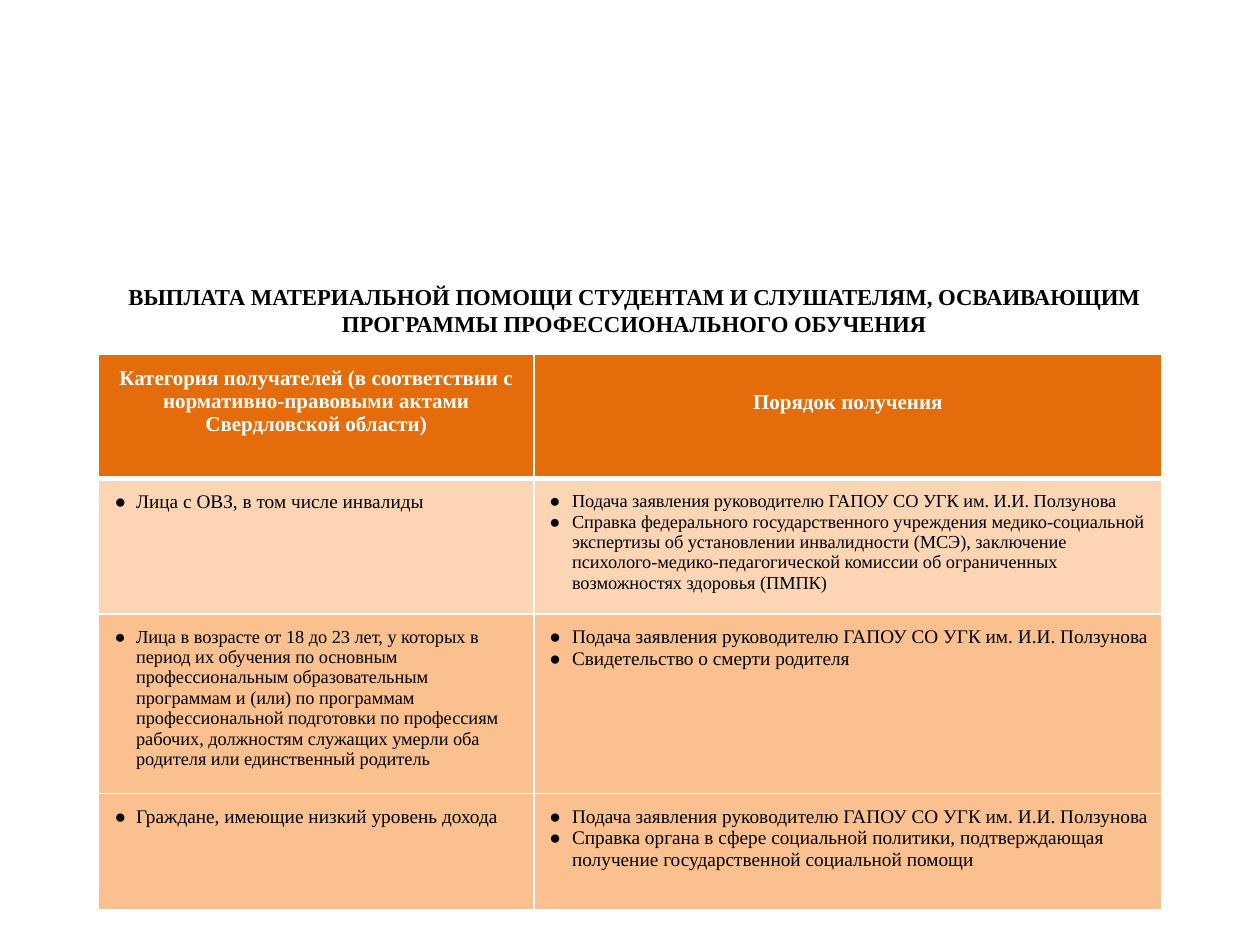
from lxml import etree
from pptx import Presentation
from pptx.dml.color import RGBColor
from pptx.enum import text
from pptx.oxml.ns import qn
from pptx.util import Inches, Pt

FONT = "Times New Roman"
WHITE, BLACK = "FFFFFF", "000000"
HEADER_FILL, LIGHT_FILL, DARK_FILL = "E46C0A", "FCD5B5", "FAC090"
COLUMN_WIDTHS = [3.46, 4.98]
BULLET_HANGS = [0.17, 0.18]
MARGIN = 0.1

TITLE = ("ВЫПЛАТА МАТЕРИАЛЬНОЙ ПОМОЩИ СТУДЕНТАМ И СЛУШАТЕЛЯМ, "
         "ОСВАИВАЮЩИМ ПРОГРАММЫ ПРОФЕССИОНАЛЬНОГО ОБУЧЕНИЯ")
HEADERS = [
    ("Категория получателей (в соответствии с нормативно-правовыми актами "
     "Свердловской области)", MARGIN),
    ("Порядок получения", 0.29),
]
HEADER_HEIGHT = 0.99
APPLICATION = "Подача заявления руководителю ГАПОУ СО УГК им. И.И. Ползунова"
RECIPIENTS = [
    (1.06, LIGHT_FILL, [
        (11, ["Лица с ОВЗ, в том числе инвалиды"]),
        (10.5, [APPLICATION,
                "Справка федерального государственного учреждения медико-социальной "
                "экспертизы об установлении инвалидности (МСЭ), заключение "
                "психолого-медико-педагогической комиссии об ограниченных "
                "возможностях здоровья (ПМПК)"]),
    ]),
    (1.41, DARK_FILL, [
        (10.5, ["Лица в возрасте от 18 до 23 лет, у которых в период их обучения по "
                "основным профессиональным образовательным программам и (или) по "
                "программам профессиональной подготовки по профессиям рабочих, "
                "должностям служащих умерли оба родителя или единственный родитель"]),
        (11, [APPLICATION, "Свидетельство о смерти родителя"]),
    ]),
    (0.92, DARK_FILL, [
        (11, ["Граждане, имеющие низкий уровень дохода"]),
        (11, [APPLICATION,
              "Справка органа в сфере социальной политики, подтверждающая "
              "получение государственной социальной помощи"]),
    ]),
]


def color(value):
    return RGBColor.from_string(value)


def write(paragraph, words, size, ink, bold=False, align=text.PP_ALIGN.LEFT):
    run = paragraph.add_run()
    run.text = words
    paragraph.alignment = align
    for name, value in {"name": FONT, "size": Pt(size), "bold": bold}.items():
        setattr(run.font, name, value)
    run.font.color.rgb = color(ink)


def add_bullet(paragraph, hang):
    properties = paragraph._p.get_or_add_pPr()
    properties.set("marL", str(Inches(0.2)))
    properties.set("indent", str(-Inches(hang)))
    etree.SubElement(properties, qn("a:buFont"), typeface=FONT)
    etree.SubElement(properties, qn("a:buChar"), char="●")


def format_cell(cell, fill, edges, top=MARGIN):
    properties = cell._tc.get_or_add_tcPr()
    for side, width in edges.items():
        line = etree.SubElement(properties, qn(f"a:ln{side}"), w=str(Pt(width)))
        paint = etree.SubElement(line, qn("a:solidFill"))
        etree.SubElement(paint, qn("a:srgbClr"), val=WHITE)
    cell.fill.solid()
    cell.fill.fore_color.rgb = color(fill)
    margins = {"left": MARGIN, "right": MARGIN, "top": top, "bottom": MARGIN}
    for side, inset in margins.items():
        setattr(cell, f"margin_{side}", Inches(inset))


def add_title(slide, left, top, width, height):
    frame = slide.shapes.add_textbox(*map(Inches, (left, top, width, height))).text_frame
    frame.word_wrap = True
    frame.vertical_anchor = text.MSO_ANCHOR.MIDDLE
    write(frame.paragraphs[0], TITLE, 13, BLACK, True, text.PP_ALIGN.CENTER)


def add_aid_table(slide, left, top, width, height):
    table = slide.shapes.add_table(
        len(RECIPIENTS) + 1, len(HEADERS),
        *map(Inches, (left, top, width, height))).table
    table.horz_banding = False
    for column, column_width in zip(table.columns, COLUMN_WIDTHS):
        column.width = Inches(column_width)

    table.rows[0].height = Inches(HEADER_HEIGHT)
    for cell, (words, inset) in zip(table.rows[0].cells, HEADERS):
        format_cell(cell, HEADER_FILL, {"L": 1, "R": 1, "T": 1, "B": 3}, inset)
        write(cell.text_frame.paragraphs[0], words, 12, WHITE, True, text.PP_ALIGN.CENTER)

    for index, (row_height, fill, entries) in enumerate(RECIPIENTS, 1):
        row = table.rows[index]
        row.height = Inches(row_height)
        edges = {"L": 1, "R": 1, "T": 3 if index == 1 else 1, "B": 1}
        for cell, (size, items), hang in zip(row.cells, entries, BULLET_HANGS):
            format_cell(cell, fill, edges)
            frame = cell.text_frame
            for number, item in enumerate(items):
                paragraph = frame.add_paragraph() if number else frame.paragraphs[0]
                add_bullet(paragraph, hang)
                write(paragraph, item, size, BLACK)


def main():
    deck = Presentation()
    deck.slide_width, deck.slide_height = Inches(10), Inches(7.5)
    slide = deck.slides.add_slide(deck.slide_layouts[6])
    add_title(slide, 0.78, 2.11, 8.5, 0.7)
    add_aid_table(slide, 0.78, 2.81, sum(COLUMN_WIDTHS), 4.38)
    deck.save("out.pptx")


if __name__ == "__main__":
    main()
